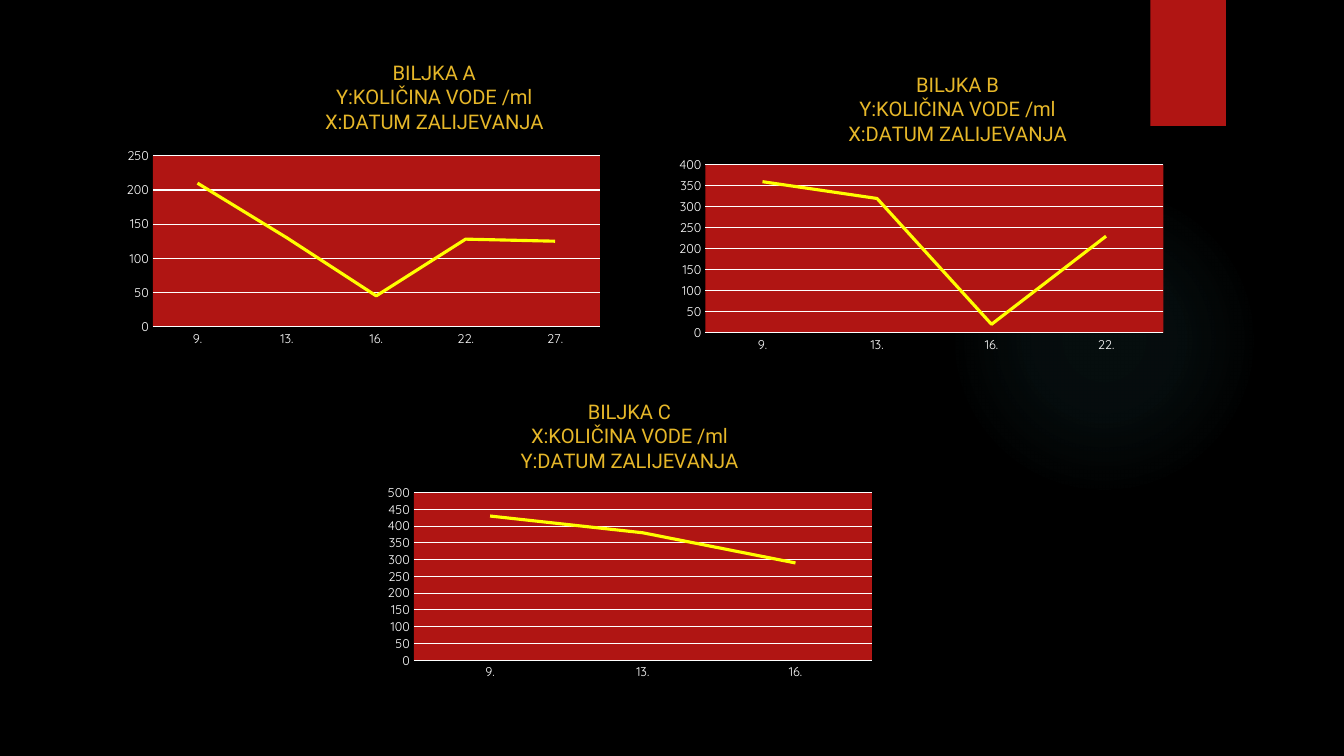
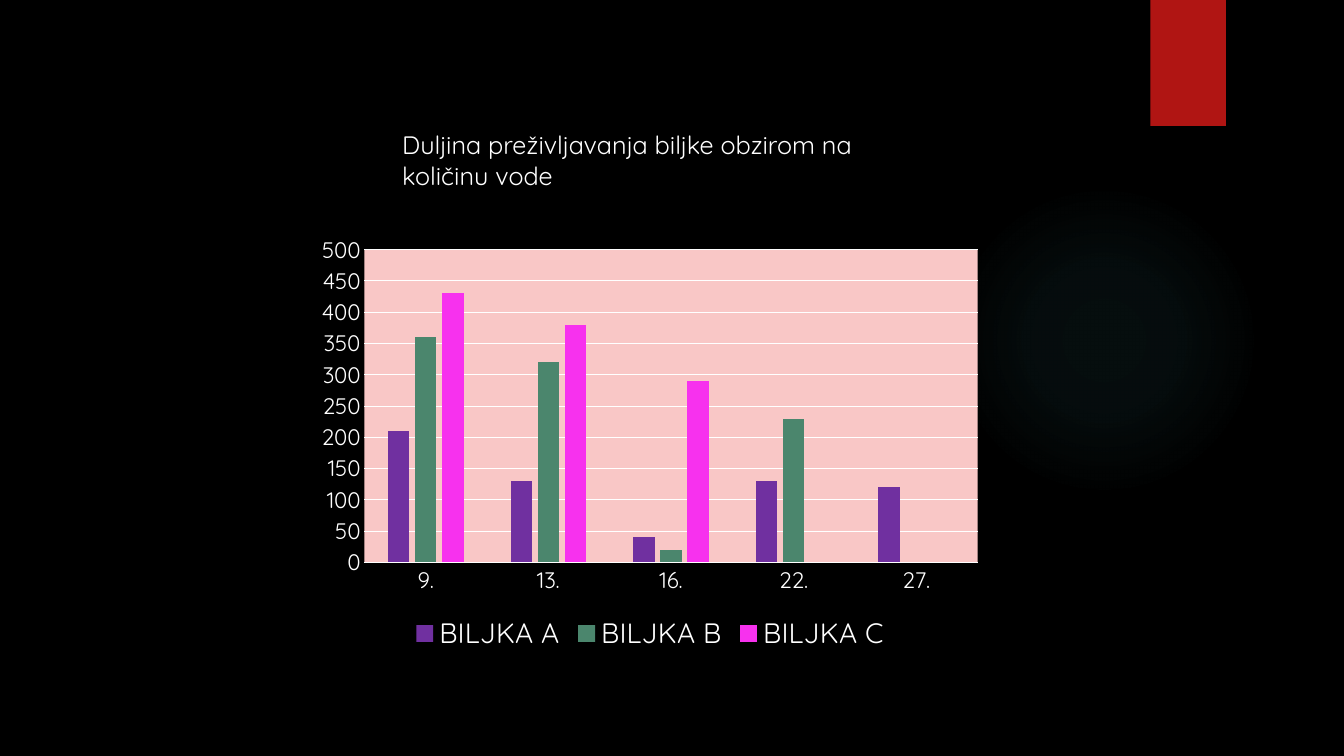
from dataclasses import dataclass
from typing import Optional

from lxml.etree import SubElement
from pptx import Presentation
from pptx.chart.chart import Chart
from pptx.chart.data import CategoryChartData
from pptx.dml.color import RGBColor
from pptx.enum.chart import XL_CHART_TYPE, XL_LEGEND_POSITION, XL_TICK_MARK
from pptx.enum.shapes import MSO_SHAPE
from pptx.enum.text import MSO_AUTO_SIZE, PP_ALIGN
from pptx.oxml import parse_xml
from pptx.oxml.ns import nsdecls, qn
from pptx.slide import Slide
from pptx.text.text import Font, TextFrame
from pptx.util import Inches, Pt

COLUMNS, ROWS = 160, 90
CELL = Inches(7.5) / ROWS
BODY_FONT, TITLE_FONT = "Quicksand", "Roboto"
COLORS = {
    "background": "000000",
    "text": "FFFFFF",
    "title": "E6B729",
    "red": "B01513",
    "glow": "50B9C1",
    "line": "FFFF00",
    "pink": "F9C7C6",
    "plant A": "7030A0",
    "plant B": "4B866D",
    "plant C": "F731EE",
}
DATES = ["9.", "13.", "16.", "22.", "27."]
WATER = {
    "A": [210, 130, 45, 128, 125],
    "B": [360, 320, 20, 230],
    "C": [430, 380, 290],
}


@dataclass(frozen=True)
class Area:
    """Place on the grid, in columns and rows."""
    column: float
    row: float
    columns: float
    rows: float

    def lengths(self) -> tuple[int, ...]:
        return tuple(round(cells * CELL) for cells in
                     (self.column, self.row, self.columns, self.rows))


@dataclass(frozen=True)
class Layout:
    """Place inside a chart, in percent of its size."""
    x: float
    y: float
    width: Optional[float] = None
    height: Optional[float] = None


@dataclass(frozen=True)
class PlantChart:
    plant: str
    axis_names: tuple[str, str]
    area: Area
    title: Layout
    plot: Layout
    maximum: int


WIDE_PLOT = Layout(7.1, 35.8, 90.9, 55.5)
PLANT_CHARTS = [
    PlantChart("A", ("Y", "X"), Area(12.25, 6.75, 60, 36),
               Layout(43.5, 0), Layout(9.9, 32.8, 88.7, 56.5), 250),
    PlantChart("B", ("Y", "X"), Area(79.7, 6.75, 60, 36),
               Layout(34.9, 4), WIDE_PLOT, 400),
    PlantChart("C", ("X", "Y"), Area(45, 45.75, 60, 36),
               Layout(27.7, 3.8), WIDE_PLOT, 500),
]


def color(name: str) -> RGBColor:
    return RGBColor.from_string(COLORS[name])


def format_font(font: Font, size: float, name: str = BODY_FONT,
                color_name: str = "text") -> None:
    font.name, font.size, font.bold = name, Pt(size), False
    font.color.rgb = color(color_name)


def write_text(frame: TextFrame, text: str, *, size: float,
               font_name: str = BODY_FONT, color_name: str = "text",
               align: PP_ALIGN = PP_ALIGN.LEFT) -> None:
    """Fill a frame with one paragraph per line of text."""
    for index, line in enumerate(text.split("\n")):
        paragraph = frame.add_paragraph() if index else frame.paragraphs[0]
        paragraph.alignment = align
        run = paragraph.add_run()
        run.text = line
        format_font(run.font, size, font_name, color_name)


def add_plain_shape(slide: Slide, kind: MSO_SHAPE, area: Area, color_name: str):
    shape = slide.shapes.add_shape(kind, *area.lengths())
    shape.shadow.inherit = False
    shape.fill.solid()
    shape.fill.fore_color.rgb = color(color_name)
    shape.line.fill.background()
    return shape


def add_glow(slide: Slide) -> None:
    shape = add_plain_shape(slide, MSO_SHAPE.OVAL, Area(112.9, 22, 37, 37), "glow")
    stops = "".join(
        f'<a:gs pos="{position * 1000}"><a:srgbClr val="{COLORS["glow"]}">'
        f'<a:alpha val="{opacity * 1000}"/></a:srgbClr></a:gs>'
        for position, opacity in ((0, 7), (36, 6), (69, 0)))
    gradient = parse_xml(
        f'<a:gradFill {nsdecls("a")}><a:gsLst>{stops}</a:gsLst>'
        '<a:path path="circle"><a:fillToRect l="50000" t="50000" r="50000" '
        'b="50000"/></a:path></a:gradFill>')
    properties = shape._element.spPr
    properties.replace(properties.find(qn("a:solidFill")), gradient)


def add_themed_slide(presentation) -> Slide:
    slide = presentation.slides.add_slide(presentation.slide_layouts[6])
    add_glow(slide)
    add_plain_shape(slide, MSO_SHAPE.RECTANGLE, Area(136.95, 0, 9, 15), "red")
    return slide


def set_layout(element, layout: Layout, index: int) -> None:
    """Fix the place of a chart part; index is where its layout element belongs."""
    for old_layout in element.findall(qn("c:layout")):
        element.remove(old_layout)
    holder = parse_xml(f'<c:layout {nsdecls("c")}><c:manualLayout/></c:layout>')
    manual = holder[0]
    settings = {"xMode": "edge", "yMode": "edge"}
    if layout.width is not None:
        settings = {"layoutTarget": "inner", **settings}
    for tag, share in zip("xywh", (layout.x, layout.y, layout.width, layout.height)):
        if share is not None:
            settings[tag] = str(round(share / 100, 4))
    for tag, value in settings.items():
        SubElement(manual, qn(f"c:{tag}")).set("val", value)
    element.insert(index, holder)


def fill_plot(chart: Chart, color_name: str, layout: Layout) -> None:
    plot_area = chart._chartSpace.chart.plotArea
    set_layout(plot_area, layout, 0)
    plot_area.append(parse_xml(
        f'<c:spPr {nsdecls("c", "a")}><a:solidFill>'
        f'<a:srgbClr val="{COLORS[color_name]}"/></a:solidFill>'
        '<a:ln><a:noFill/></a:ln></c:spPr>'))


def format_axes(chart: Chart, size: float, maximum: int) -> None:
    values, categories = chart.value_axis, chart.category_axis
    for axis in (values, categories):
        axis.major_tick_mark = axis.minor_tick_mark = XL_TICK_MARK.NONE
        format_font(axis.tick_labels.font, size)
    values.minimum_scale, values.maximum_scale, values.major_unit = 0, maximum, 50
    values.has_major_gridlines = True
    values.format.line.fill.background()
    for line in (values.major_gridlines.format.line, categories.format.line):
        line.color.rgb = color("text")
        line.width = Pt(0.75)


def add_themed_chart(slide: Slide, kind: XL_CHART_TYPE, area: Area,
                     series: dict[str, list[int]], *, label_size: float,
                     maximum: int, plot_color: str, plot: Layout) -> Chart:
    length = max(map(len, series.values()))
    data = CategoryChartData()
    data.categories = DATES[:length]
    for name, values in series.items():
        data.add_series(name, values + [None] * (length - len(values)))
    chart = slide.shapes.add_chart(kind, *area.lengths(), data).chart
    chart.has_title = chart.has_legend = False
    chart.plots[0].vary_by_categories = False
    format_font(chart.font, 10)
    format_axes(chart, label_size, maximum)
    fill_plot(chart, plot_color, plot)
    return chart


def add_plant_chart(slide: Slide, item: PlantChart) -> None:
    chart = add_themed_chart(
        slide, XL_CHART_TYPE.LINE, item.area, {"Series 1": WATER[item.plant]},
        label_size=9, maximum=item.maximum, plot_color="red", plot=item.plot)
    series = chart.plots[0].series[0]
    series.smooth = False
    series.format.line.color.rgb = color("line")
    series.format.line.width = Pt(2.25)
    water_axis, date_axis = item.axis_names
    chart.has_title = True
    write_text(chart.chart_title.text_frame,
               f"BILJKA {item.plant}\n{water_axis}:KOLIČINA VODE /ml\n"
               f"{date_axis}:DATUM ZALIJEVANJA",
               size=14.4, font_name=TITLE_FONT, color_name="title",
               align=PP_ALIGN.CENTER)
    set_layout(chart.chart_title._element, item.title, 1)


def add_comparison_chart(slide: Slide) -> None:
    """Compare all plants, with the water rounded to tens."""
    chart = add_themed_chart(
        slide, XL_CHART_TYPE.COLUMN_CLUSTERED, Area(36.75, 27, 81.4, 55.5),
        {f"BILJKA {plant}": [round(value, -1) for value in values]
         for plant, values in WATER.items()},
        label_size=16, maximum=500, plot_color="pink",
        plot=Layout(8.15, 4.9, 89.7, 67.1))
    plot = chart.plots[0]
    plot.gap_width, plot.overlap = 219, -27
    for plant, series in zip(WATER, plot.series):
        series.format.fill.solid()
        series.format.fill.fore_color.rgb = color(f"plant {plant}")
    chart.has_legend = True
    chart.legend.position = XL_LEGEND_POSITION.BOTTOM
    chart.legend.include_in_layout = False
    format_font(chart.legend.font, 20)
    set_layout(chart.legend._element, Layout(14.4, 82.2), 1)


def add_heading(slide: Slide, text: str) -> None:
    box = slide.shapes.add_textbox(*Area(46.7, 14.85, 60.5, 8.5).lengths())
    box.text_frame.word_wrap = True
    box.text_frame.auto_size = MSO_AUTO_SIZE.SHAPE_TO_FIT_TEXT
    write_text(box.text_frame, text, size=18)


def main() -> None:
    presentation = Presentation()
    presentation.slide_width = round(COLUMNS * CELL)
    presentation.slide_height = round(ROWS * CELL)
    background = presentation.slide_master.background.fill
    background.solid()
    background.fore_color.rgb = color("background")

    plants_slide = add_themed_slide(presentation)
    for item in PLANT_CHARTS:
        add_plant_chart(plants_slide, item)

    comparison_slide = add_themed_slide(presentation)
    add_comparison_chart(comparison_slide)
    add_heading(comparison_slide,
                "Duljina preživljavanja biljke obzirom na količinu vode")
    presentation.save("out.pptx")


if __name__ == "__main__":
    main()
